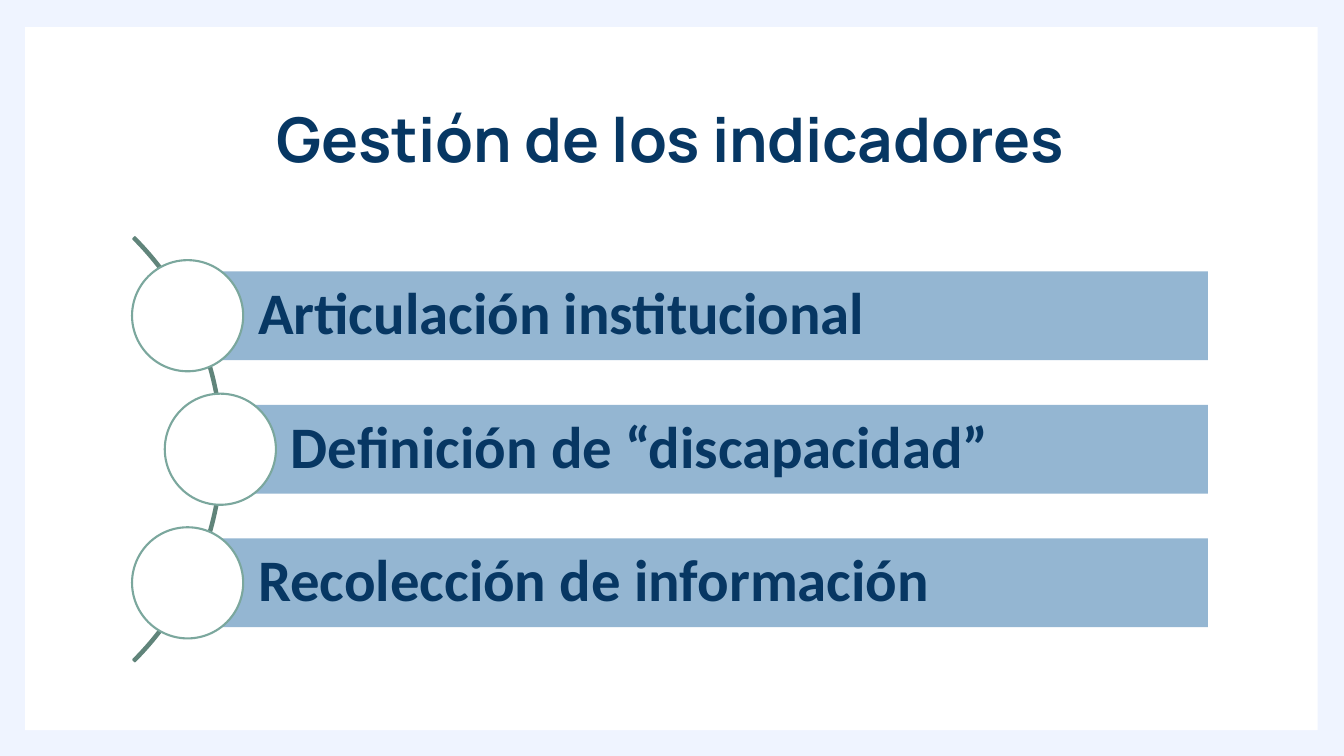
import pptx
import pptx.util
import pptx.dml.color
import pptx.enum.shapes
import pptx.enum.text

Pt = pptx.util.Pt
SHAPES = pptx.enum.shapes.MSO_SHAPE
ALIGN = pptx.enum.text.PP_ALIGN
COLORS = {
    "backdrop": "EFF4FF",
    "white": "FFFFFF",
    "navy": "073763",
    "bar": "94B6D2",
    "ring": "7BA79D",
    "arc": "60847A",
}
TOPICS = [
    ("Articulación institucional", 134),
    ("Definición de “discapacidad”", 157.4),
    ("Recolección de información", 134),
]
FIRST_CENTER, TOPIC_PITCH = 225.5, 95.4
BAR_RIGHT, BAR_HEIGHT, CIRCLE_SIZE = 862.8, 63.4, 79.4


def color(name):
    return pptx.dml.color.RGBColor.from_string(COLORS[name])


def apply(target, values):
    for key, value in values.items():
        setattr(target, key, value)


def add_figure(slide, preset, box, fill, outline=None):
    figure = slide.shapes.add_shape(preset, *map(Pt, box))
    figure.shadow.inherit = False
    figure.fill.solid()
    figure.fill.fore_color.rgb = color(fill)
    if outline:
        figure.line.color.rgb = color(outline)
        figure.line.width = Pt(1.5)
    else:
        figure.line.fill.background()
    return figure


def write(holder, wording, font, size, align, insets):
    frame = holder.text_frame
    left, top, right, bottom = map(Pt, insets)
    apply(frame, {
        "word_wrap": True,
        "vertical_anchor": pptx.enum.text.MSO_ANCHOR.MIDDLE,
        "margin_left": left,
        "margin_top": top,
        "margin_right": right,
        "margin_bottom": bottom,
    })
    paragraph = frame.paragraphs[0]
    apply(paragraph, {"alignment": align, "line_spacing": 0.9})
    run = paragraph.add_run()
    run.text = wording
    apply(run.font, {"name": font, "size": Pt(size), "bold": True})
    run.font.color.rgb = color("navy")


def add_title(slide, wording):
    title = slide.shapes.add_textbox(Pt(90), Pt(48.2), Pt(777.6), Pt(106.6))
    write(title, wording, "Manrope", 44, ALIGN.CENTER, (7.2, 3.6, 7.2, 3.6))


def add_arc(slide):
    arc = add_figure(slide, SHAPES.BLOCK_ARC, (-269.3, 106.7, 428.4, 428.4), "arc", "arc")
    for index, value in enumerate((189, 27, 0.004)):
        arc.adjustments[index] = value


def add_topic(slide, wording, left, center):
    bar_box = (left, center - BAR_HEIGHT / 2, BAR_RIGHT - left, BAR_HEIGHT)
    bar = add_figure(slide, SHAPES.RECTANGLE, bar_box, "bar")
    write(bar, wording, "Calibri", 42, ALIGN.LEFT, (50.4, 8.4, 8.4, 8.4))
    radius = CIRCLE_SIZE / 2
    circle_box = (left - radius, center - radius, CIRCLE_SIZE, CIRCLE_SIZE)
    add_figure(slide, SHAPES.OVAL, circle_box, "white", "ring")


def main():
    deck = pptx.Presentation()
    apply(deck, {"slide_width": Pt(960), "slide_height": Pt(540)})
    slide = deck.slides.add_slide(deck.slide_layouts[6])
    slide.background.fill.solid()
    slide.background.fill.fore_color.rgb = color("backdrop")
    add_figure(slide, SHAPES.RECTANGLE, (18, 19.4, 923.2, 502.2), "white")
    add_title(slide, "Gestión de los indicadores")
    add_arc(slide)
    for index, (wording, left) in enumerate(TOPICS):
        add_topic(slide, wording, left, FIRST_CENTER + index * TOPIC_PITCH)
    deck.save("out.pptx")


if __name__ == "__main__":
    main()
